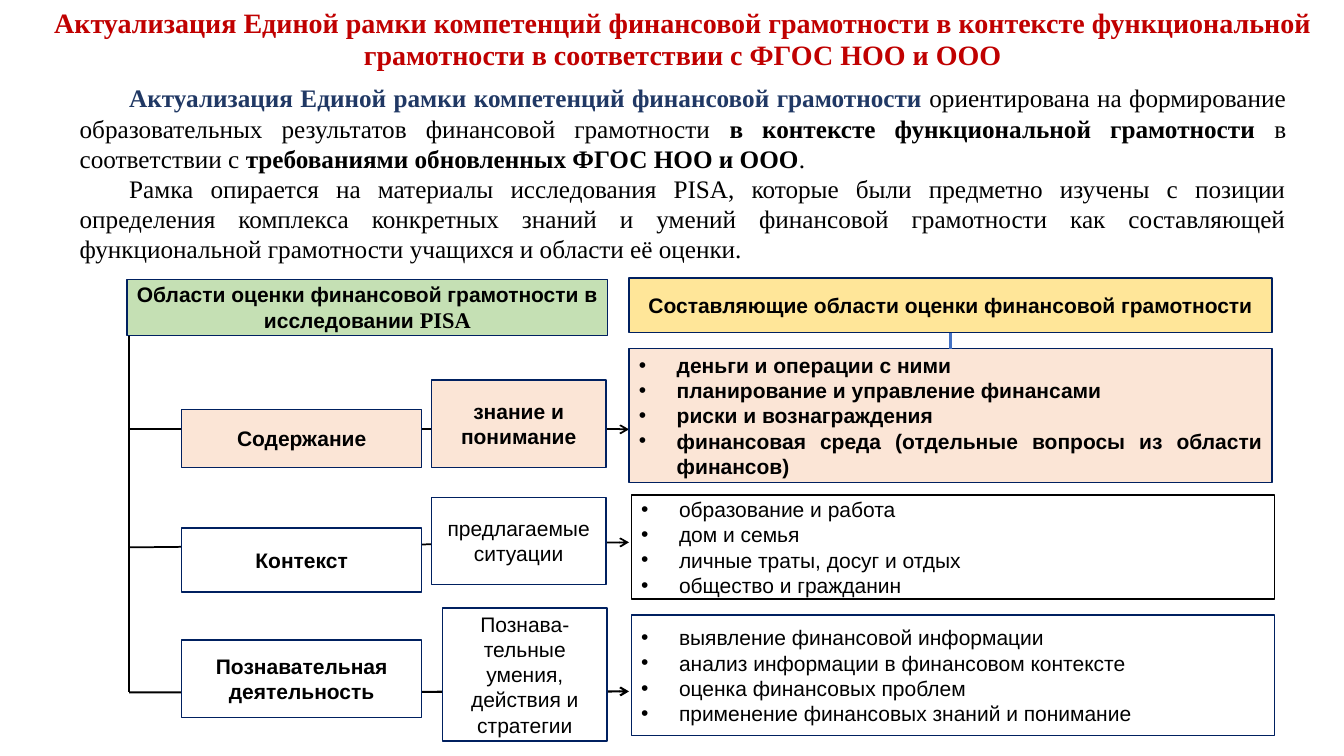
from dataclasses import dataclass
from typing import Any

from lxml.etree import SubElement
from pptx import Presentation
from pptx.dml.color import RGBColor
from pptx.enum.shapes import MSO_CONNECTOR, MSO_SHAPE
from pptx.enum.text import MSO_ANCHOR, MSO_AUTO_SIZE, PP_ALIGN
from pptx.oxml.ns import qn
from pptx.util import Pt


@dataclass(frozen=True)
class Theme:
    serif: str = "Times New Roman"
    sans: str = "Arial"
    title_size: float = 20
    body_size: float = 18
    acronym_size: float = 16
    box_size: float = 15
    black: str = "000000"
    white: str = "FFFFFF"
    red: str = "C00000"
    navy: str = "002060"
    slate: str = "203864"
    blue: str = "4472C4"
    peach: str = "FBE5D6"
    green: str = "C5E0B4"
    yellow: str = "FFE699"


THEME = Theme()


@dataclass(frozen=True)
class Span:
    text: str
    bold: bool = False
    color: str = THEME.black
    font: str = THEME.sans
    size: float = THEME.box_size


@dataclass(frozen=True)
class Frame:
    left: float
    top: float
    width: float
    height: float


@dataclass(frozen=True)
class Card:
    frame: Frame
    paragraphs: list[list[Span]]
    fill: str = THEME.white
    line: str = THEME.navy
    bullets: bool = False


@dataclass(frozen=True)
class Link:
    start: tuple[float, float]
    end: tuple[float, float]
    width: float = 1.25
    color: str = THEME.black
    arrow: bool = False


@dataclass(frozen=True)
class Area:
    title: str
    title_frame: Frame
    ability: str
    ability_frame: Frame
    topics: list[str]
    topics_frame: Frame
    link: Link
    fill: str = THEME.white
    topics_line: str = THEME.navy
    strong: bool = False


TRUNK = 92.2
LIST_LEFT = 449.3
LIST_WIDTH = 459.4

AREAS = [
    Area("Содержание", Frame(129.8, 292.3, 171.4, 41.8),
         "знание и понимание", Frame(308.2, 271.4, 124.6, 62.6),
         ["деньги и операции с ними", "планирование и управление финансами",
          "риски и вознаграждения",
          "финансовая среда (отдельные вопросы из области финансов)"],
         Frame(LIST_LEFT, 249.1, LIST_WIDTH, 95.4),
         Link((TRUNK, 306.7), (LIST_LEFT, 306.7), arrow=True),
         fill=THEME.peach, strong=True),
    Area("Контекст", Frame(129.8, 377.3, 171.4, 45.7),
         "предлагаемые ситуации", Frame(308.2, 355.2, 124.6, 62.4),
         ["образование и работа", "дом и семья",
          "личные траты, досуг и отдых", "общество и гражданин"],
         Frame(450.9, 353.7, LIST_WIDTH, 74.2),
         Link((TRUNK, 391), (LIST_LEFT, 387.4), arrow=True),
         topics_line=THEME.black),
    Area("Познавательная деятельность", Frame(129.8, 457.2, 171.4, 55.4),
         "Познава-тельные умения, действия и стратегии",
         Frame(316.2, 434.2, 117.4, 95),
         ["выявление финансовой информации",
          "анализ информации в финансовом контексте",
          "оценка финансовых проблем",
          "применение финансовых знаний и понимание"],
         Frame(450.9, 439.2, LIST_WIDTH, 86.4),
         Link((TRUNK, 494.6), (LIST_LEFT, 493.9), width=1.5, arrow=True)),
]

HEADERS = [
    Card(Frame(90.7, 199.7, 343.4, 39.8),
         [[Span("Области оценки финансовой грамотности в исследовании ", bold=True),
           Span("PISA", bold=True, font=THEME.serif, size=THEME.acronym_size)]],
         fill=THEME.green),
    Card(Frame(LIST_LEFT, 198.7, LIST_WIDTH, 38.9),
         [[Span("Составляющие области оценки финансовой грамотности", bold=True)]],
         fill=THEME.yellow),
]


def prose(text: str, bold: bool = False, color: str = THEME.black) -> Span:
    return Span(text, bold, color, THEME.serif, THEME.body_size)


TITLE = [[Span("Актуализация Единой рамки компетенций финансовой грамотности "
               "в контексте функциональной грамотности в соответствии с ФГОС НОО и ООО",
               True, THEME.red, THEME.serif, THEME.title_size)]]

INTRODUCTION = [
    [prose("Актуализация Единой рамки компетенций финансовой грамотности ", True, THEME.slate),
     prose("ориентирована на формирование образовательных результатов финансовой грамотности "),
     prose("в контексте функциональной грамотности ", True),
     prose("в соответствии с "),
     prose("требованиями обновленных ФГОС НОО и ООО", True),
     prose(".")],
    [prose("Рамка опирается на материалы исследования PISA, которые были предметно изучены "
           "с позиции определения комплекса конкретных знаний и умений финансовой грамотности "
           "как составляющей функциональной грамотности учащихся и области её оценки.")],
]


def write_text(box: Any, paragraphs: list[list[Span]], *, align: PP_ALIGN = PP_ALIGN.CENTER,
               anchor: MSO_ANCHOR = MSO_ANCHOR.MIDDLE, spacing: float = 1.0,
               margin: float = 0, indent: float = 0, bullet: str = "") -> None:
    text_frame = box.text_frame
    text_frame.word_wrap = True
    text_frame.auto_size = MSO_AUTO_SIZE.NONE
    text_frame.vertical_anchor = anchor
    for index, spans in enumerate(paragraphs):
        para = text_frame.paragraphs[0] if index == 0 else text_frame.add_paragraph()
        para.alignment = align
        para.line_spacing = spacing
        para.space_before = para.space_after = Pt(0)
        properties = para._p.get_or_add_pPr()
        properties.set("marL", str(Pt(margin)))
        properties.set("indent", str(Pt(indent)))
        if bullet:
            SubElement(properties, qn("a:buFont"), typeface=THEME.sans)
            SubElement(properties, qn("a:buChar"), char=bullet)
        else:
            SubElement(properties, qn("a:buNone"))
        for span in spans:
            run = para.add_run()
            run.text = span.text
            run.font.name = span.font
            run.font.size = Pt(span.size)
            run.font.bold = span.bold
            run.font.color.rgb = RGBColor.from_string(span.color)


def place(box: Any, frame: Frame) -> None:
    box.left, box.top = Pt(frame.left), Pt(frame.top)
    box.width, box.height = Pt(frame.width), Pt(frame.height)


def draw_card(page: Any, card: Card) -> None:
    frame = card.frame
    box = page.shapes.add_shape(MSO_SHAPE.RECTANGLE, Pt(frame.left), Pt(frame.top),
                                Pt(frame.width), Pt(frame.height))
    box.shadow.inherit = False
    box.fill.solid()
    box.fill.fore_color.rgb = RGBColor.from_string(card.fill)
    box.line.color.rgb = RGBColor.from_string(card.line)
    box.line.width = Pt(1)
    if card.bullets:
        write_text(box, card.paragraphs, align=PP_ALIGN.JUSTIFY,
                   margin=27, indent=-27, bullet="•")
    else:
        write_text(box, card.paragraphs)


def draw_link(page: Any, link: Link) -> None:
    connector = page.shapes.add_connector(
        MSO_CONNECTOR.STRAIGHT, *(Pt(value) for value in link.start + link.end))
    connector.line.color.rgb = RGBColor.from_string(link.color)
    connector.line.width = Pt(link.width)
    if link.arrow:
        SubElement(connector.line._get_or_add_ln(), qn("a:tailEnd"), type="arrow")
    SubElement(connector._element.spPr, qn("a:effectLst"))


def draw_area(page: Any, area: Area) -> None:
    draw_link(page, area.link)
    draw_card(page, Card(area.title_frame, [[Span(area.title, bold=True)]], area.fill))
    draw_card(page, Card(area.ability_frame, [[Span(area.ability, area.strong)]], area.fill))
    draw_card(page, Card(area.topics_frame, [[Span(topic, area.strong)] for topic in area.topics],
                         area.fill, area.topics_line, bullets=True))


def main() -> None:
    deck = Presentation()
    deck.slide_width, deck.slide_height = Pt(960), Pt(540)
    page = deck.slides.add_slide(deck.slide_layouts[1])
    title, body = page.placeholders
    place(title, Frame(26.6, 2.2, 922.3, 53.3))
    write_text(title, TITLE, anchor=MSO_ANCHOR.TOP, spacing=0.95)
    place(body, Frame(49.7, 55.4, 876.2, 138.2))
    write_text(body, INTRODUCTION, align=PP_ALIGN.JUSTIFY, anchor=MSO_ANCHOR.TOP, indent=35.4)
    draw_link(page, Link((TRUNK, 239.6), (TRUNK, 494.6)))
    for area in AREAS:
        draw_area(page, area)
    for header in HEADERS:
        draw_card(page, header)
    draw_link(page, Link((679, 237.6), (679, 249.1), width=2.25, color=THEME.blue))
    deck.save("out.pptx")


if __name__ == "__main__":
    main()
